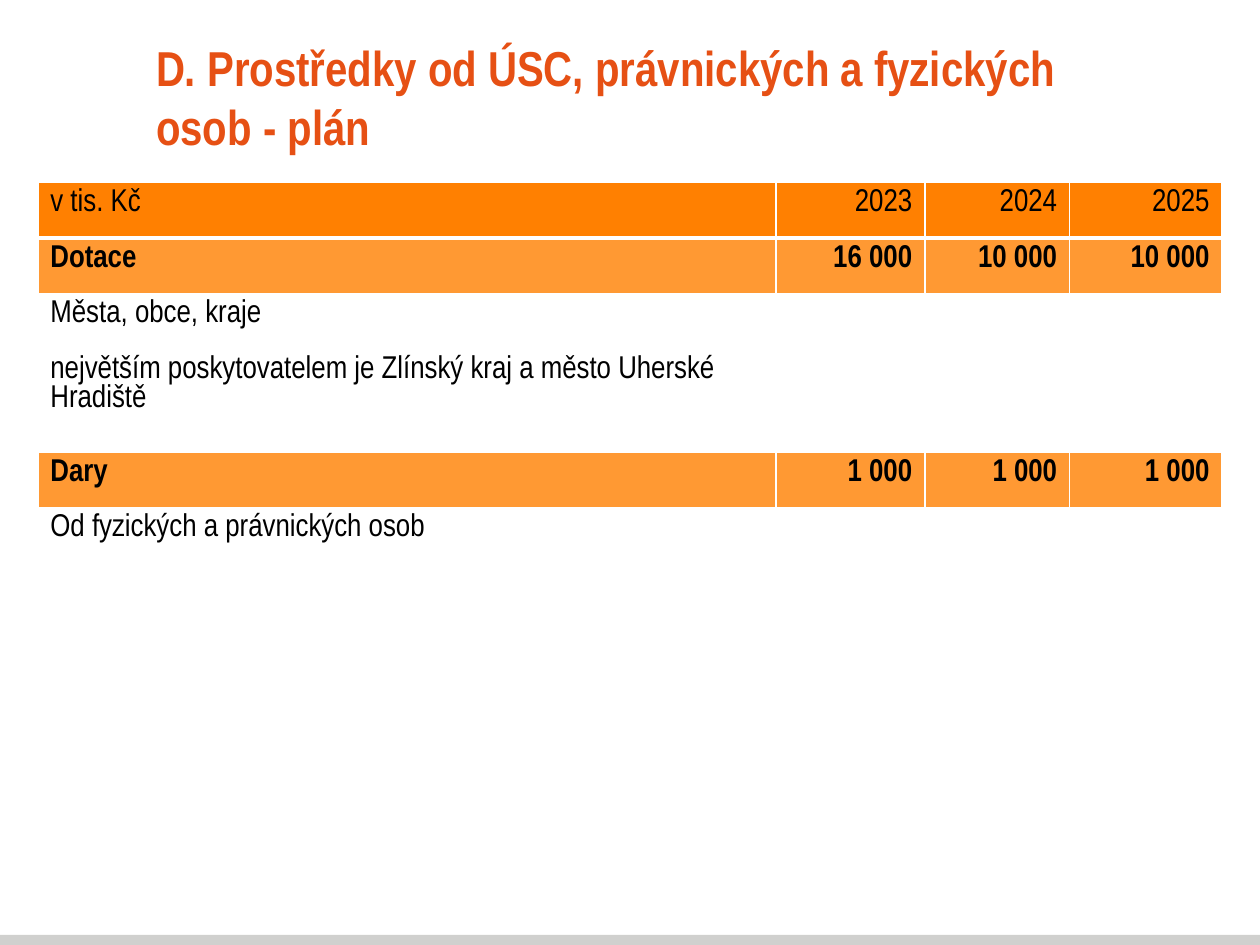
from dataclasses import dataclass

from lxml.etree import SubElement
from pptx import Presentation
from pptx.dml.color import RGBColor
from pptx.enum.shapes import MSO_SHAPE as Shape
from pptx.enum.text import MSO_ANCHOR as Anchor, PP_ALIGN as Align
from pptx.oxml.ns import qn
from pptx.util import Inches, Pt

WIDTH, HEIGHT = 10, 7.5
FONT = "Arial Narrow"
COLORS = {
    "title": "E65014",
    "text": "000000",
    "header": "FF8001",
    "group": "FF9933",
    "plain": "FFFFFF",
    "border": "FFFFFF",
    "footer": "D0D0CE",
}
COLUMN_WIDTHS = (5.86, 1.18, 1.15, 1.21)
TABLE_LEFT, TABLE_TOP = 0.03 * WIDTH, 1.45


@dataclass(frozen=True)
class BudgetRow:
    label: str
    amounts: tuple[str, ...] = ("", "", "")
    style: str = "plain"
    height: float = 0.44


ROWS = (
    BudgetRow("v tis. Kč", ("2023", "2024", "2025"), "header"),
    BudgetRow("Dotace", ("16 000", "10 000", "10 000"), "group"),
    BudgetRow("Města, obce, kraje"),
    BudgetRow("největším poskytovatelem je Zlínský kraj a město Uherské Hradiště",
              height=0.82),
    BudgetRow("Dary", ("1 000", "1 000", "1 000"), "group"),
    BudgetRow("Od fyzických a právnických osob"),
)


def color(name: str) -> RGBColor:
    return RGBColor.from_string(COLORS[name])


def set_font(font, size: float, color_name: str, bold: bool) -> None:
    font.name = FONT
    font.size = Pt(size)
    font.bold = bold
    font.color.rgb = color(color_name)


def add_title(slide, text: str) -> None:
    box = slide.shapes.add_textbox(Inches(1.14), Inches(0.36), Inches(8.11), Inches(0.81))
    frame = box.text_frame
    frame.word_wrap = True
    frame.vertical_anchor = Anchor.MIDDLE
    frame.text = text
    set_font(frame.paragraphs[0].runs[0].font, 28, "title", True)


def add_footer_bar(slide) -> None:
    bar_height = 0.08
    bar = slide.shapes.add_shape(Shape.RECTANGLE, 0, Inches(HEIGHT - bar_height),
                                 Inches(WIDTH), Inches(bar_height))
    bar.shadow.inherit = False
    bar.fill.solid()
    bar.fill.fore_color.rgb = color("footer")
    bar.line.fill.background()


def set_borders(cell, top: float, bottom: float) -> None:
    """Draw the cell's borders; top and bottom are widths in points."""
    properties = cell._tc.get_or_add_tcPr()
    for side, width in (("L", 1), ("R", 1), ("T", top), ("B", bottom)):
        line = SubElement(properties, qn(f"a:ln{side}"), w=str(Pt(width)))
        fill = SubElement(line, qn("a:solidFill"))
        SubElement(fill, qn("a:srgbClr"), val=COLORS["border"])


def fill_cell(cell, text: str, style: str, align: Align) -> None:
    cell.fill.solid()
    cell.fill.fore_color.rgb = color(style)
    cell.text_frame.text = text
    paragraph = cell.text_frame.paragraphs[0]
    paragraph.alignment = align
    set_font(paragraph.font, 18, "text", style == "group")
    for run in paragraph.runs:
        set_font(run.font, 18, "text", style == "group")


def add_budget_table(slide) -> None:
    frame = slide.shapes.add_table(
        len(ROWS), len(COLUMN_WIDTHS), Inches(TABLE_LEFT), Inches(TABLE_TOP),
        Inches(sum(COLUMN_WIDTHS)), Inches(sum(row.height for row in ROWS)))
    table = frame.table
    for column, width in zip(table.columns, COLUMN_WIDTHS):
        column.width = Inches(width)
    for index, row in enumerate(ROWS):
        table.rows[index].height = Inches(row.height)
        top = 3 if index == 1 else 1
        bottom = 3 if row.style == "header" else 1
        for column, text in enumerate((row.label, *row.amounts)):
            cell = table.cell(index, column)
            set_borders(cell, top, bottom)
            fill_cell(cell, text, row.style, Align.RIGHT if column else Align.LEFT)


def main() -> None:
    presentation = Presentation()
    presentation.slide_width = Inches(WIDTH)
    presentation.slide_height = Inches(HEIGHT)
    slide = presentation.slides.add_slide(presentation.slide_layouts[6])
    add_footer_bar(slide)
    add_title(slide, "D. Prostředky od ÚSC, právnických a fyzických osob - plán")
    add_budget_table(slide)
    presentation.save("out.pptx")


if __name__ == "__main__":
    main()
